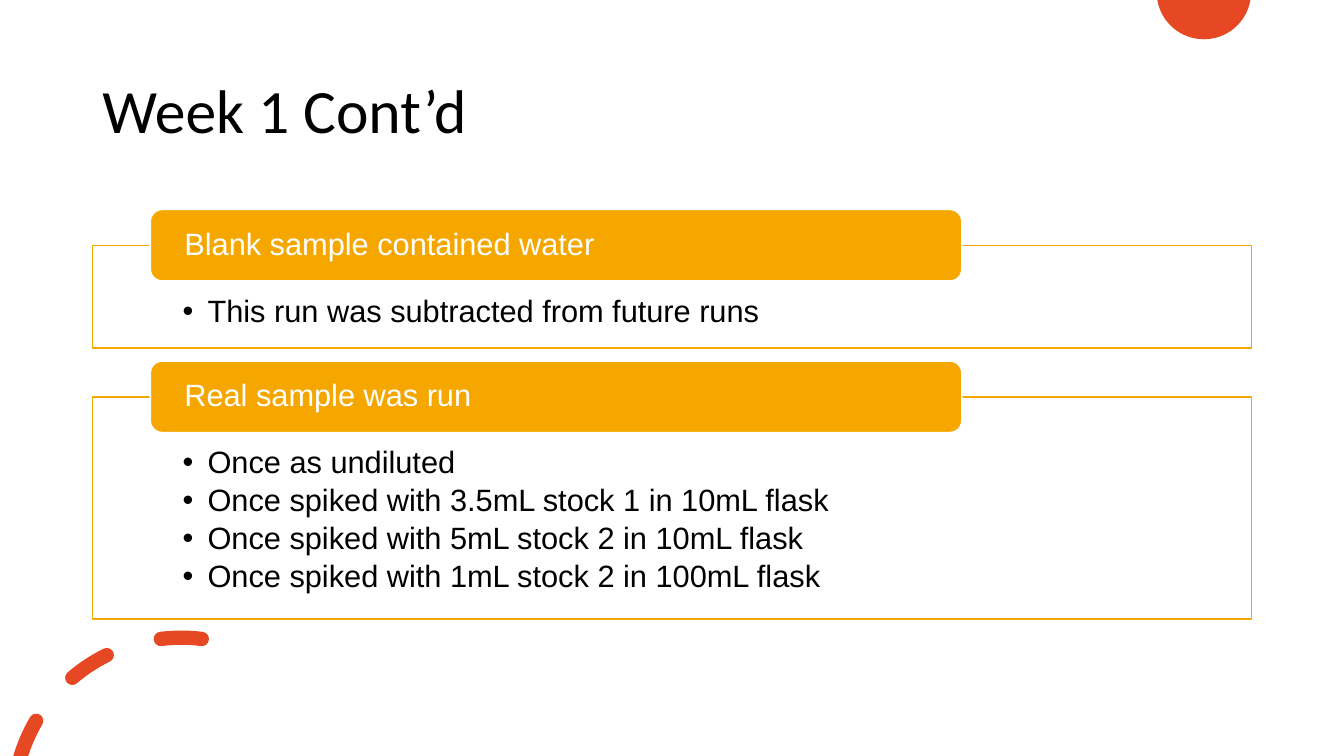
"""Build the slide on the sample runs of week 1."""
from math import ceil, cos, radians, sin, tan

from lxml import etree
from pptx import Presentation
from pptx.dml.color import RGBColor
from pptx.enum.shapes import MSO_SHAPE
from pptx.enum.text import MSO_ANCHOR, MSO_AUTO_SIZE, PP_ALIGN
from pptx.oxml.ns import qn
from pptx.util import Cm, Pt

ROUNDED = MSO_SHAPE.ROUNDED_RECTANGLE
TOP, MIDDLE = MSO_ANCHOR.TOP, MSO_ANCHOR.MIDDLE
LEFT = PP_ALIGN.LEFT
NO_FIT = MSO_AUTO_SIZE.NONE

BLACK = RGBColor(0x00, 0x00, 0x00)
WHITE = RGBColor(0xFF, 0xFF, 0xFF)
AMBER = RGBColor(0xF5, 0xA7, 0x00)
RED = RGBColor(0xE6, 0x48, 0x23)

TITLE = "Week 1 Cont’d"
SECTIONS = [
    ("Blank sample contained water", 2.59, [
        "This run was subtracted from future runs",
    ]),
    ("Real sample was run", 5.6, [
        "Once as undiluted",
        "Once spiked with 3.5mL stock 1 in 10mL flask",
        "Once spiked with 5mL stock 2 in 10mL flask",
        "Once spiked with 1mL stock 2 in 100mL flask",
    ]),
]

SLIDE_WIDTH, SLIDE_HEIGHT = 33.87, 19.05
MARGIN, CONTENT_WIDTH = 2.33, 29.21
FIRST_TOP, SECTION_GAP = 6.18, 1.23
HEADING_LEFT, HEADING_WIDTH, HEADING_HEIGHT = 3.79, 20.45, 1.8
BULLET_INDENT = 0.63

DISC_CENTRE, DISC_RADIUS, DISC_ARC = (30.34, -0.2), 1.19, (189.7, 350.3)
RING_CENTRE, RING_RADIUS, DASH_HALF = (4.57, 20.31), 4.24, 0.18
DASHES = [(83, 97, 97), (116.3, 130.4, 130.4), (149.6, 163.4, 161.9)]


def place(shape, left, top, width, height):
    shape.left, shape.top = Cm(left), Cm(top)
    shape.width, shape.height = Cm(width), Cm(height)


def set_frame(frame, anchor, insets):
    frame.word_wrap = True
    frame.auto_size = NO_FIT
    frame.vertical_anchor = anchor
    (frame.margin_left, frame.margin_top,
     frame.margin_right, frame.margin_bottom) = [Cm(inset) for inset in insets]


def format_paragraph(paragraph, font_name, size, color, after=0):
    paragraph.alignment = LEFT
    paragraph.line_spacing = 0.9
    paragraph.space_before = Pt(0)
    paragraph.space_after = Pt(after)
    for run in paragraph.runs:
        run.font.name = font_name
        run.font.size = Pt(size)
        run.font.color.rgb = color


def add_bullet(paragraph):
    properties = paragraph._p.get_or_add_pPr()
    properties.set("marL", str(Cm(BULLET_INDENT)))
    properties.set("indent", str(-Cm(BULLET_INDENT)))
    etree.SubElement(properties, qn("a:buChar")).set("char", "•")


def on_circle(centre, radius, angle):
    return (centre[0] + radius * cos(radians(angle)),
            centre[1] - radius * sin(radians(angle)))


def arc(centre, radius, start, end):
    """Return the start point, then two control points and an end per curve."""
    count = ceil(abs(end - start) / 90)
    step = (end - start) / count
    pull = 4 / 3 * tan(radians(step / 4)) * radius
    points = [on_circle(centre, radius, start)]
    for i in range(count):
        for angle, sign in ((start + i * step, 1), (start + (i + 1) * step, -1)):
            x, y = on_circle(centre, radius, angle)
            points.append((x - sign * pull * sin(radians(angle)),
                           y - sign * pull * cos(radians(angle))))
        points.append(on_circle(centre, radius, start + (i + 1) * step))
    return points


def dash_outline(start, outer_end, inner_end):
    outer = arc(RING_CENTRE, RING_RADIUS + DASH_HALF, start, outer_end)
    inner = arc(RING_CENTRE, RING_RADIUS - DASH_HALF, inner_end, start)
    start_tip = on_circle(RING_CENTRE, RING_RADIUS, start)
    end_tip = on_circle(RING_CENTRE, RING_RADIUS, outer_end)
    if outer_end == inner_end:
        end_cap = arc(end_tip, DASH_HALF, outer_end, outer_end + 180)
    else:
        end_cap = [outer[-1], outer[-1], inner[0], inner[0]]
    start_cap = arc(start_tip, DASH_HALF, start + 180, start + 360)
    return outer + end_cap[1:] + inner[1:] + start_cap[1:]


def add_ornament(slide, outlines):
    contours = [[(Cm(x), Cm(y)) for x, y in outline] for outline in outlines]
    builder = slide.shapes.build_freeform(*contours[0][0])
    for i, contour in enumerate(contours):
        if i:
            builder.move_to(*contour[0])
        builder.add_line_segments(contour[1:])
    ornament = builder.convert_to_shape()
    segments = list(ornament._element.iter(qn("a:lnTo")))
    for curve, second, third in zip(segments[::3], segments[1::3], segments[2::3]):
        curve.tag = qn("a:cubicBezTo")
        for segment in (second, third):
            curve.append(segment[0])
            segment.getparent().remove(segment)
    ornament.shadow.inherit = False
    ornament.fill.solid()
    ornament.fill.fore_color.rgb = RED
    ornament.line.fill.background()


def fill_list(box, top, height, items):
    place(box, MARGIN, top, CONTENT_WIDTH, height)
    box.fill.solid()
    box.fill.fore_color.rgb = WHITE
    box.line.color.rgb = AMBER
    box.line.width = Pt(1)
    frame = box.text_frame
    set_frame(frame, TOP, (2.27, 1.27, 2.27, 0.43))
    frame.text = "\n".join(items)
    for paragraph in frame.paragraphs:
        format_paragraph(paragraph, "Arial", 22, BLACK, after=3.3)
        add_bullet(paragraph)


def add_heading(slide, text, box_top):
    heading = slide.shapes.add_shape(
        ROUNDED, Cm(HEADING_LEFT), Cm(box_top - HEADING_HEIGHT / 2),
        Cm(HEADING_WIDTH), Cm(HEADING_HEIGHT))
    heading.shadow.inherit = False
    heading.fill.solid()
    heading.fill.fore_color.rgb = AMBER
    heading.line.color.rgb = WHITE
    heading.line.width = Pt(1)
    set_frame(heading.text_frame, MIDDLE, (0.77, 0, 0.77, 0))
    heading.text_frame.text = text
    format_paragraph(heading.text_frame.paragraphs[0], "Arial", 22, WHITE)


def main():
    deck = Presentation()
    deck.slide_width, deck.slide_height = Cm(SLIDE_WIDTH), Cm(SLIDE_HEIGHT)
    slide = deck.slides.add_slide(deck.slide_layouts.get_by_name("Two Content"))

    title, *list_boxes = list(slide.placeholders)[:3]
    place(title, MARGIN, 1.02, CONTENT_WIDTH, 3.68)
    set_frame(title.text_frame, MIDDLE, (0.25, 0.13, 0.25, 0.13))
    title.text_frame.text = TITLE
    format_paragraph(title.text_frame.paragraphs[0], "Calibri", 44, BLACK)

    add_ornament(slide, [arc(DISC_CENTRE, DISC_RADIUS, *DISC_ARC)])
    add_ornament(slide, [dash_outline(*dash) for dash in DASHES])

    top = FIRST_TOP
    for box, (heading, height, items) in zip(list_boxes, SECTIONS):
        fill_list(box, top, height, items)
        add_heading(slide, heading, top)
        top += height + SECTION_GAP

    deck.save("out.pptx")


if __name__ == "__main__":
    main()
